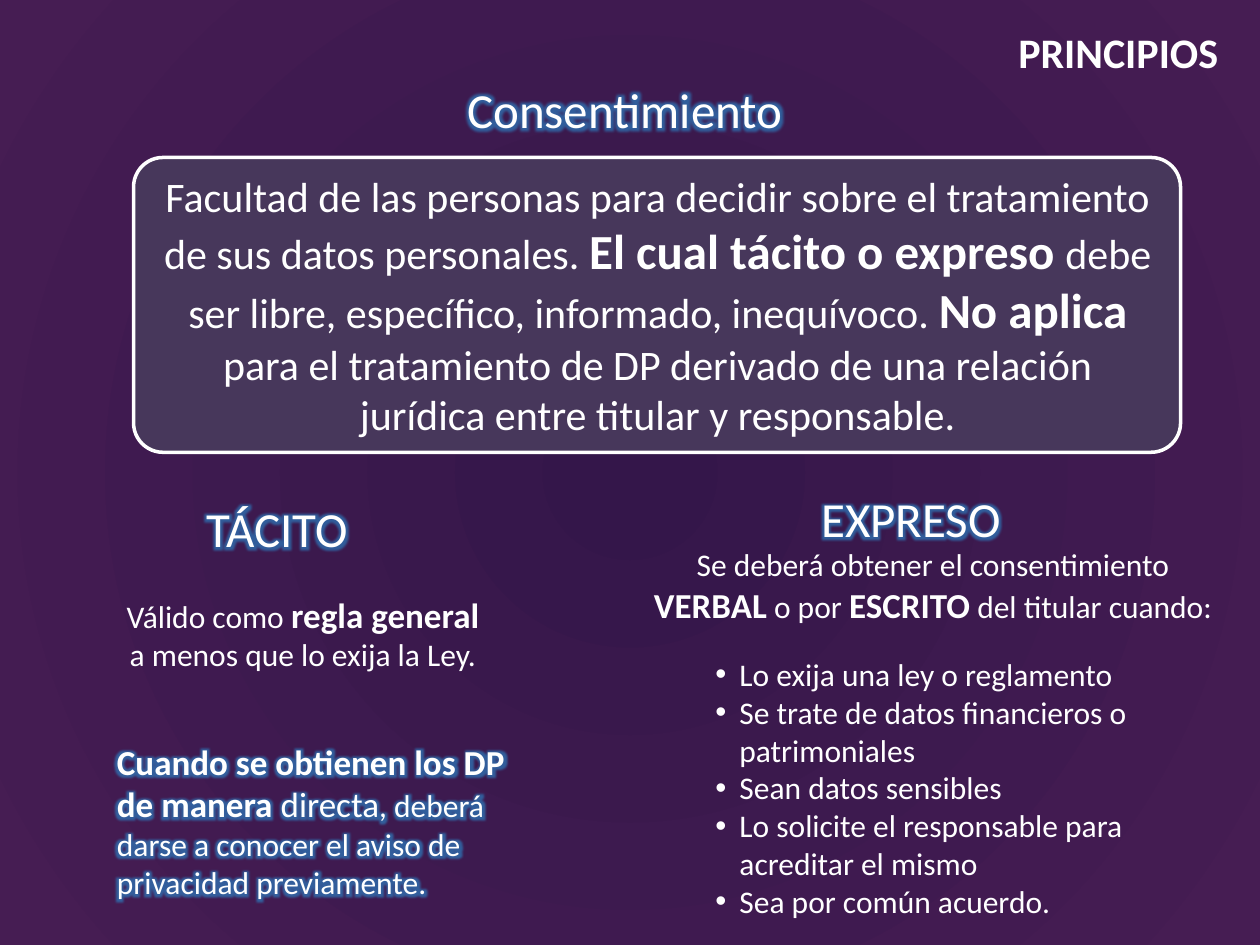
from dataclasses import dataclass

from lxml.etree import SubElement
from pptx import Presentation
from pptx.dml.color import RGBColor
from pptx.enum.shapes import MSO_SHAPE as Shape
from pptx.enum.text import MSO_ANCHOR as Anchor, MSO_AUTO_SIZE as AutoSize, PP_ALIGN as Align
from pptx.oxml import parse_xml
from pptx.oxml.ns import nsdecls, qn
from pptx.util import Inches, Pt

COLORS = {
    "center": "34164A",
    "edge": "461D53",
    "panel": "47375B",
    "text": "FFFFFF",
    "glow": "2E75B6",
}
FONT = "Calibri"


@dataclass
class Piece:
    text: str
    size: float
    bold: bool = False


@dataclass
class Block:
    at: tuple
    pieces: list
    align: Align = Align.LEFT
    wrap: bool = True
    glow: bool = False


def color(name: str) -> RGBColor:
    return RGBColor.from_string(COLORS[name])


def place(at: tuple) -> list:
    return [Inches(value) for value in at]


def add_glow(span) -> None:
    effects = parse_xml(
        f'<a:effectLst {nsdecls("a")}><a:glow rad="101600">'
        f'<a:srgbClr val="{COLORS["glow"]}"><a:alpha val="75000"/></a:srgbClr>'
        "</a:glow></a:effectLst>"
    )
    span.font.fill._xPr.find(qn("a:solidFill")).addnext(effects)


def write(para, pieces: list, align=Align.LEFT, glow=False, bullet=False, before=0) -> None:
    para.alignment = align
    if before:
        para.space_before = Pt(before)
    if bullet:
        props = para._p.get_or_add_pPr()
        props.set("marL", str(Inches(0.69)))
        props.set("indent", str(Inches(-0.19)))
        SubElement(props, qn("a:buFont")).set("typeface", "Arial")
        SubElement(props, qn("a:buChar")).set("char", "•")
    for piece in pieces:
        span = para.add_run()
        span.text = piece.text
        span.font.name = FONT
        span.font.size = Pt(piece.size)
        span.font.bold = piece.bold
        span.font.color.rgb = color("text")
        if glow:
            add_glow(span)


def add_block(slide, block: Block):
    box = slide.shapes.add_textbox(*place(block.at))
    frame = box.text_frame
    frame.word_wrap = block.wrap
    frame.auto_size = AutoSize.SHAPE_TO_FIT_TEXT
    write(frame.paragraphs[0], block.pieces, align=block.align, glow=block.glow)
    return frame


def add_panel(group, kind: Shape, at: tuple):
    panel = group.shapes.add_shape(kind, *place(at))
    panel.shadow.inherit = False
    panel.fill.solid()
    panel.fill.fore_color.rgb = color("panel")
    panel.line.fill.background()
    return panel


def paint_background(slide) -> None:
    fill = slide.background.fill
    fill.gradient()
    for stop, name in zip(fill.gradient_stops, ("center", "edge")):
        stop.color.rgb = color(name)
    gradient = slide.element.find(f".//{qn('a:gradFill')}")
    gradient.replace(
        gradient.find(qn("a:lin")),
        parse_xml(
            f'<a:path {nsdecls("a")} path="circle">'
            '<a:fillToRect l="50000" t="50000" r="50000" b="50000"/></a:path>'
        ),
    )


def add_title(slide) -> None:
    title = slide.shapes.title
    title.left, title.top, title.width, title.height = place((2.66, 0.16, 7.11, 0.5))
    frame = title.text_frame
    frame.word_wrap = True
    frame.auto_size = AutoSize.SHAPE_TO_FIT_TEXT
    frame.vertical_anchor = Anchor.TOP
    write(frame.paragraphs[0], [Piece("PRINCIPIOS", 24, True)], align=Align.RIGHT)


def add_definition(slide) -> None:
    group = slide.shapes.add_group_shape()
    border = add_panel(group, Shape.ROUNDED_RECTANGLE, (1.06, 1.25, 8.31, 2.34))
    border.adjustments[0] = 0.1
    border.line.color.rgb = color("text")
    border.line.width = Pt(2)
    frame = add_panel(group, Shape.RECTANGLE, (1.21, 1.32, 8.02, 2.2)).text_frame
    frame.word_wrap = True
    frame.vertical_anchor = Anchor.MIDDLE
    frame.margin_left = frame.margin_right = Inches(0.03)
    frame.margin_top = frame.margin_bottom = Inches(0.03)
    write(frame.paragraphs[0], [
        Piece("Facultad de las personas para decidir sobre el tratamiento de sus datos personales. ", 24),
        Piece("El cual tácito o expreso ", 28, True),
        Piece("debe ser libre, específico, informado, inequívoco. ", 24),
        Piece("No aplica ", 28, True),
        Piece("para el tratamiento de DP derivado de una relación jurídica entre titular y responsable.", 24),
    ], align=Align.CENTER)


HEADINGS = [
    ("Consentimiento", (3.61, 0.58, 2.73, 0.57)),
    ("TÁCITO", (1.54, 3.91, 1.33, 0.57)),
    ("EXPRESO", (6.42, 3.83, 1.64, 0.57)),
]
TACIT_RULE = Block((0.83, 4.66, 3.15, 0.74), [
    Piece("Válido como ", 18),
    Piece("regla general", 20, True),
    Piece(" a menos que lo exija la Ley.", 18),
], align=Align.CENTER)
TACIT_NOTICE = Block((0.83, 5.83, 3.39, 1.38), [
    Piece("Cuando se obtienen los DP de manera ", 20, True),
    Piece("directa", 20),
    Piece(", deberá darse a conocer el aviso de privacidad previamente.", 18),
], glow=True)
EXPRESS_RULE = Block((5.08, 4.28, 4.65, 3.1), [
    Piece("Se deberá obtener el consentimiento ", 18),
    Piece("VERBAL", 20, True),
    Piece(" o por ", 18),
    Piece("ESCRITO", 20, True),
    Piece(" del titular cuando:", 18),
], align=Align.CENTER)
EXPRESS_CASES = [
    "Lo exija una ley o reglamento",
    "Se trate de datos financieros o patrimoniales",
    "Sean datos sensibles",
    "Lo solicite el responsable para acreditar el mismo",
    "Sea por común acuerdo.",
]


def main() -> None:
    deck = Presentation()
    deck.slide_width, deck.slide_height = Inches(10), Inches(7.5)
    slide = deck.slides.add_slide(deck.slide_layouts[5])
    paint_background(slide)
    add_title(slide)
    add_definition(slide)
    for text, at in HEADINGS:
        add_block(slide, Block(at, [Piece(text, 28)], wrap=False, glow=True))
    add_block(slide, TACIT_RULE)
    add_block(slide, TACIT_NOTICE)
    frame = add_block(slide, EXPRESS_RULE)
    for index, case in enumerate(EXPRESS_CASES):
        write(frame.add_paragraph(), [Piece(case, 18)], bullet=True, before=0 if index else 17)
    deck.save("out.pptx")


if __name__ == "__main__":
    main()
